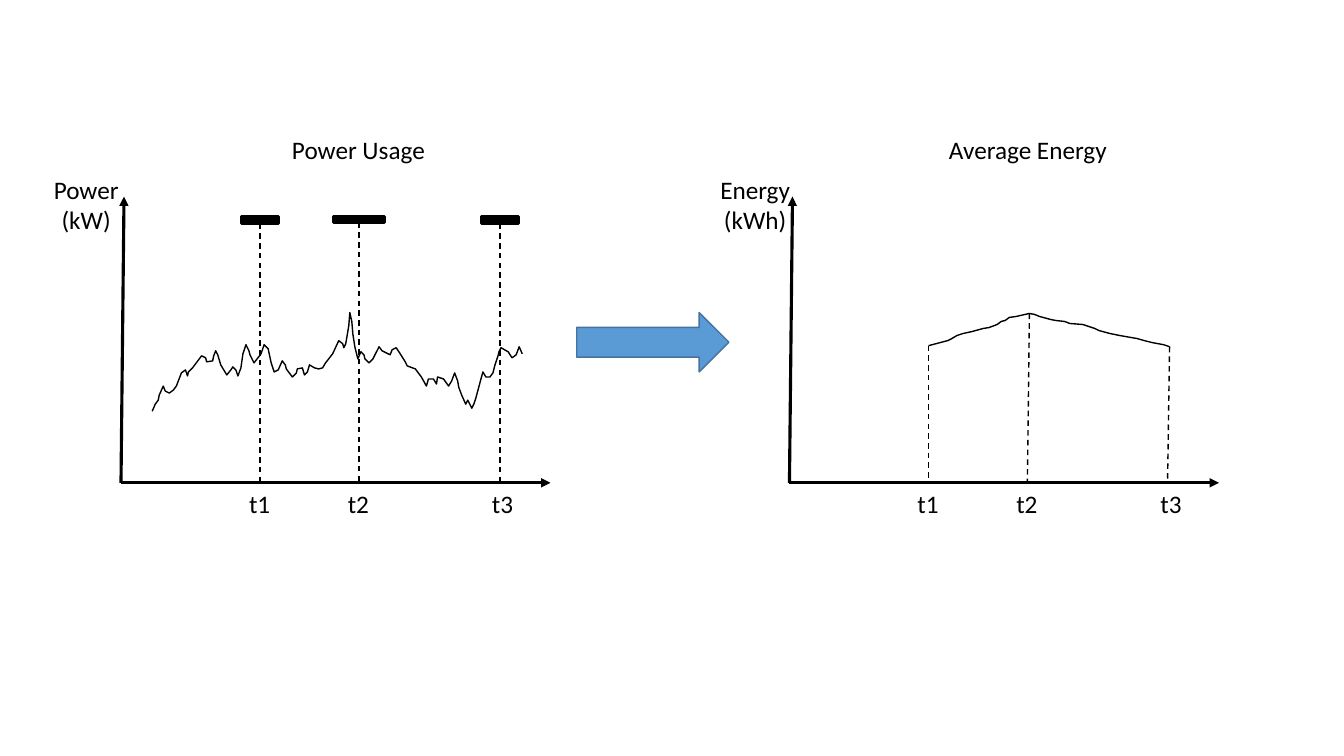
from pptx import Presentation
from pptx.dml.color import RGBColor
from pptx.enum.dml import MSO_LINE
from pptx.enum.shapes import MSO_CONNECTOR, MSO_SHAPE
from pptx.enum.text import MSO_AUTO_SIZE, PP_ALIGN
from pptx.oxml.ns import qn
from pptx.util import Inches, Pt
from lxml.etree import SubElement

BLACK, BLUE, DARK_BLUE = "000000", "5B9BD5", "43739E"
AXIS_Y = 4.79
BOTTOM = 2

POWER_CURVE = [
    (1.51, 4.08), (1.54, 4.01), (1.57, 3.97), (1.58, 3.92), (1.62, 3.83), (1.64, 3.88),
    (1.68, 3.9), (1.72, 3.87), (1.75, 3.83), (1.8, 3.7), (1.84, 3.67), (1.86, 3.73),
    (1.87, 3.69), (1.91, 3.65), (2, 3.53), (2.04, 3.55), (2.05, 3.59), (2.11, 3.58),
    (2.12, 3.53), (2.14, 3.48), (2.16, 3.52), (2.19, 3.62), (2.25, 3.72), (2.29, 3.67),
    (2.31, 3.64), (2.34, 3.67), (2.36, 3.73), (2.39, 3.65), (2.41, 3.51), (2.44, 3.42),
    (2.47, 3.48), (2.48, 3.52), (2.52, 3.6), (2.59, 3.51), (2.62, 3.42), (2.66, 3.46),
    (2.69, 3.6), (2.72, 3.69), (2.76, 3.67), (2.8, 3.58), (2.83, 3.62), (2.84, 3.66),
    (2.9, 3.74), (2.94, 3.7), (2.95, 3.66), (3, 3.65), (3.02, 3.72), (3.05, 3.69),
    (3.07, 3.62), (3.12, 3.65), (3.16, 3.66), (3.2, 3.65), (3.23, 3.6), (3.3, 3.51),
    (3.36, 3.38), (3.4, 3.41), (3.41, 3.45), (3.43, 3.41), (3.44, 3.35), (3.46, 3.23),
    (3.47, 3.1), (3.49, 3.19), (3.5, 3.31), (3.52, 3.44), (3.55, 3.56), (3.58, 3.49),
    (3.61, 3.52), (3.62, 3.56), (3.66, 3.6), (3.7, 3.56), (3.72, 3.52), (3.76, 3.44),
    (3.79, 3.48), (3.87, 3.52), (3.89, 3.47), (3.93, 3.45), (3.97, 3.51), (4.02, 3.59),
    (4.04, 3.63), (4.12, 3.66), (4.18, 3.74), (4.23, 3.83), (4.25, 3.76), (4.3, 3.76),
    (4.33, 3.81), (4.34, 3.74), (4.4, 3.76), (4.45, 3.83), (4.48, 3.78), (4.51, 3.7),
    (4.54, 3.78), (4.55, 3.84), (4.58, 3.92), (4.62, 4.01), (4.64, 3.97), (4.68, 4.05),
    (4.7, 4.01), (4.72, 3.95), (4.76, 3.8), (4.79, 3.69), (4.82, 3.74), (4.86, 3.74),
    (4.89, 3.7), (4.91, 3.62), (4.94, 3.53), (4.95, 3.49), (4.97, 3.45), (5.04, 3.49),
    (5.08, 3.55), (5.12, 3.52), (5.15, 3.44), (5.18, 3.51),
]
ENERGY_CURVE = [
    (9.21, 3.43), (9.36, 3.39), (9.4, 3.38), (9.44, 3.36), (9.49, 3.33), (9.55, 3.31),
    (9.64, 3.29), (9.75, 3.26), (9.81, 3.25), (9.89, 3.22), (9.93, 3.19), (9.97, 3.18),
    (10.01, 3.15), (10.08, 3.14), (10.21, 3.11), (10.26, 3.12), (10.31, 3.14),
    (10.42, 3.17), (10.47, 3.18), (10.56, 3.19), (10.61, 3.21), (10.74, 3.22),
    (10.86, 3.26), (10.9, 3.28), (11.01, 3.31), (11.11, 3.33), (11.28, 3.36),
    (11.35, 3.38), (11.43, 3.4), (11.54, 3.42), (11.6, 3.44),
]


def colour(value):
    return RGBColor.from_string(value)


def apply(target, values):
    for name, value in values.items():
        setattr(target, name, value)


class Diagram:
    """Draws on one slide in a single style."""

    font = {"name": "Calibri", "size": Pt(18)}
    frame = {"word_wrap": False, "auto_size": MSO_AUTO_SIZE.SHAPE_TO_FIT_TEXT}
    thin = {"width": Pt(1)}
    thick = {"width": Pt(2.25)}
    dashed = {"width": Pt(1), "dash_style": MSO_LINE.DASH}

    def __init__(self, page):
        self.shapes = page.shapes

    def outline(self, shape, values, line_colour=BLACK):
        shape.line.color.rgb = colour(line_colour)
        apply(shape.line, values)

    def text(self, left, top, width, height, *lines):
        box = self.shapes.add_textbox(*map(Inches, (left, top, width, height)))
        apply(box.text_frame, self.frame)
        for index, line in enumerate(lines):
            para = box.text_frame.add_paragraph() if index else box.text_frame.paragraphs[0]
            para.alignment = PP_ALIGN.CENTER
            span = para.add_run()
            span.text = line
            apply(span.font, self.font)
            span.font.color.rgb = colour(BLACK)

    def block(self, kind, left, top, width, height, fill, line_colour, values):
        shape = self.shapes.add_shape(kind, *map(Inches, (left, top, width, height)))
        shape.shadow.inherit = False
        shape.fill.solid()
        shape.fill.fore_color.rgb = colour(fill)
        self.outline(shape, values, line_colour)
        return shape

    def line(self, start, end, values, arrow=False):
        line = self.shapes.add_connector(MSO_CONNECTOR.STRAIGHT, *map(Inches, start + end))
        self.outline(line, values)
        properties = line._element.spPr
        if arrow:
            SubElement(properties.find(qn("a:ln")), qn("a:headEnd"), type="triangle")
        SubElement(properties, qn("a:effectLst"))
        return line

    def curve(self, points):
        start, *rest = [(Inches(x), Inches(y)) for x, y in points]
        builder = self.shapes.build_freeform(*start)
        builder.add_line_segments(rest, close=False)
        shape = builder.convert_to_shape()
        shape.shadow.inherit = False
        shape.fill.background()
        self.outline(shape, self.thin)

    def axes(self, left):
        origin = (left, AXIS_Y)
        self.line((left + 0.03, 1.95), origin, self.thick, arrow=True)
        self.line((left + 4.26, AXIS_Y), origin, self.thick, arrow=True)

    def time_labels(self, lefts):
        for number, left in enumerate(lefts, 1):
            self.text(left, 4.8, 0.41, 0.4, f"t{number}")


def main():
    deck = Presentation()
    deck.slide_width, deck.slide_height = Inches(13.33), Inches(7.5)
    diagram = Diagram(deck.slides.add_slide(deck.slide_layouts[6]))

    diagram.axes(1.2)
    diagram.text(0.43, 1.68, 0.85, 0.71, "Power", "(kW)")
    diagram.text(2.79, 1.28, 1.53, 0.4, "Power Usage")
    diagram.curve(POWER_CURVE)
    for centre, width, height in ((2.58, 0.37, 0.07), (3.56, 0.51, 0.06), (4.96, 0.37, 0.07)):
        window = diagram.block(MSO_SHAPE.RECTANGLE, centre - width / 2, 2.15, width, height,
                               BLACK, BLACK, diagram.thick)
        drop = diagram.line((centre, 2.15 + height), (centre, AXIS_Y), diagram.dashed)
        drop.begin_connect(window, BOTTOM)
    diagram.time_labels((2.37, 3.35, 4.78))

    diagram.block(MSO_SHAPE.RIGHT_ARROW, 5.72, 3.1, 1.51, 0.59, BLUE, DARK_BLUE, diagram.thin)

    diagram.axes(7.83)
    diagram.text(7.04, 1.68, 0.9, 0.71, "Energy", "(kWh)")
    diagram.text(9.3, 1.28, 1.79, 0.4, "Average Energy")
    for x, top, foot in ((9.21, 3.43, 9.21), (10.21, 3.11, 10.19), (11.6, 3.44, 11.58)):
        diagram.line((x, top), (foot, AXIS_Y), diagram.dashed)
    diagram.time_labels((9, 9.98, 11.41))
    diagram.curve(ENERGY_CURVE)

    deck.save("out.pptx")


if __name__ == "__main__":
    main()
